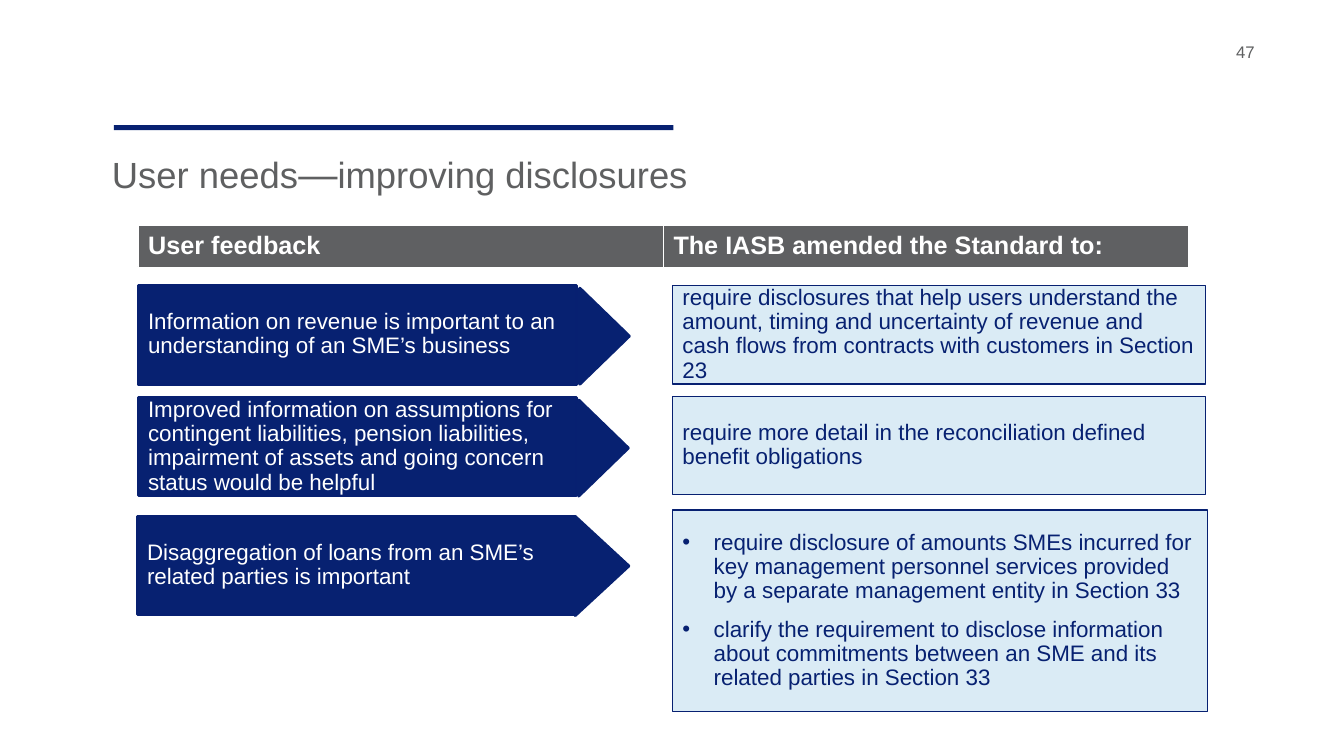
"""Build the slide on user needs and improved disclosures."""
from dataclasses import dataclass

from lxml import etree
from pptx import Presentation
from pptx.dml.color import RGBColor
from pptx.enum.shapes import MSO_SHAPE
from pptx.enum.text import MSO_ANCHOR, PP_ALIGN
from pptx.oxml.ns import qn
from pptx.shapes.autoshape import Shape
from pptx.slide import Slide
from pptx.table import _Cell
from pptx.text.text import TextFrame, _Paragraph
from pptx.util import Emu, Pt

RECTANGLE = MSO_SHAPE.RECTANGLE
TRIANGLE = MSO_SHAPE.ISOSCELES_TRIANGLE
LEFT = PP_ALIGN.LEFT
MIDDLE = MSO_ANCHOR.MIDDLE

EMU_PER_PX = 9144
FONT = "Arial"
NAVY, EDGE, PALE = "072171", "072071", "DAEBF5"
GREY, HEADER, WHITE = "5F6061", "5F6062", "FFFFFF"
BULLET_INDENT = 31


@dataclass(frozen=True)
class Box:
    """Position and size in px."""

    left: int
    top: int
    width: int
    height: int


@dataclass(frozen=True)
class Row:
    """A feedback arrow and the amendments that answer it."""

    feedback_box: Box
    tip_box: Box
    feedback: str
    amendment_box: Box
    amendments: tuple[str, ...]


ROWS = (
    Row(Box(137, 283, 435, 98), Box(552, 309, 95, 49),
        "Information on revenue is important to an understanding of an SME’s business",
        Box(667, 283, 529, 98),
        ("require disclosures that help users understand the amount, timing and uncertainty "
         "of revenue and cash flows from contracts with customers in Section 23",)),
    Row(Box(137, 394, 435, 98), Box(551, 420, 95, 49),
        "Improved information on assumptions for contingent liabilities, pension liabilities, "
        "impairment of assets and going concern status would be helpful",
        Box(667, 393, 529, 98),
        ("require more detail in the reconciliation defined benefit obligations",)),
    Row(Box(136, 512, 435, 98), Box(548, 535, 98, 53),
        "Disaggregation of loans from an SME’s related parties is important",
        Box(667, 506, 531, 200),
        ("require disclosure of amounts SMEs incurred for key management personnel services "
         "provided by a separate management entity in Section 33",
         "clarify the requirement to disclose information about commitments between an SME "
         "and its related parties in Section 33")),
)
TITLE = (("User needs", 26), ("—", 28), ("improving disclosures", 26))
HEADINGS = ("User feedback", "The IASB amended the Standard to:")


def px(length: int) -> Emu:
    """Turn px into EMU."""
    return Emu(length * EMU_PER_PX)


def rgb(colour: str) -> RGBColor:
    """Turn a hex string into a colour."""
    return RGBColor.from_string(colour)


def place(box: Box) -> tuple[Emu, Emu, Emu, Emu]:
    """Return the box in EMU."""
    return px(box.left), px(box.top), px(box.width), px(box.height)


def style(paragraph: _Paragraph, colour: str, size: int, bold: bool = False) -> None:
    """Set the paragraph's alignment and font."""
    paragraph.alignment = LEFT
    font = paragraph.font
    font.name, font.size, font.bold = FONT, Pt(size), bold
    font.color.rgb = rgb(colour)


def add_bullet(paragraph: _Paragraph) -> None:
    """Give the paragraph a hanging round bullet."""
    properties = paragraph._p.get_or_add_pPr()
    properties.set("marL", str(px(BULLET_INDENT)))
    properties.set("indent", str(-px(BULLET_INDENT)))
    etree.SubElement(properties, qn("a:buFont"), typeface=FONT)
    etree.SubElement(properties, qn("a:buChar"), char="•")


def add_block(slide: Slide, kind: MSO_SHAPE, box: Box, fill: str,
              line: str = "", weight: float = 0) -> Shape:
    """Add a filled shape, outlined if a line colour is given."""
    shape = slide.shapes.add_shape(kind, *place(box))
    shape.shadow.inherit = False
    shape.fill.solid()
    shape.fill.fore_color.rgb = rgb(fill)
    if line:
        shape.line.color.rgb = rgb(line)
        shape.line.width = Pt(weight)
    else:
        shape.line.fill.background()
    return shape


def write_block(shape: Shape, texts: tuple[str, ...], colour: str) -> None:
    """Write one paragraph per text, bulleted when there are several."""
    frame = shape.text_frame
    frame.word_wrap = True
    frame.vertical_anchor = MIDDLE
    for index, text in enumerate(texts):
        paragraph = frame.add_paragraph() if index else frame.paragraphs[0]
        paragraph.text = text
        if len(texts) > 1:
            add_bullet(paragraph)
        paragraph.line_spacing = 0.9
        if index:
            paragraph.space_before = Pt(10)
        style(paragraph, colour, 16)


def add_text(slide: Slide, box: Box) -> TextFrame:
    """Add a text box without insets."""
    frame = slide.shapes.add_textbox(*place(box)).text_frame
    frame.word_wrap = True
    frame.margin_left = frame.margin_right = frame.margin_top = frame.margin_bottom = 0
    return frame


def add_borders(cell: _Cell) -> None:
    """Draw white sides and top and a grey bottom on the cell."""
    properties = cell._tc.get_or_add_tcPr()
    sides = (("L", WHITE), ("R", WHITE), ("T", WHITE), ("B", GREY))
    for index, (side, colour) in enumerate(sides):
        line = etree.Element(qn(f"a:ln{side}"), w=str(Pt(1)))
        fill = etree.SubElement(line, qn("a:solidFill"))
        etree.SubElement(fill, qn("a:srgbClr"), val=colour)
        properties.insert(index, line)


def add_headings(slide: Slide, box: Box) -> None:
    """Add the one-row table of column headings."""
    table = slide.shapes.add_table(1, len(HEADINGS), *place(box)).table
    for cell, heading in zip(table.rows[0].cells, HEADINGS):
        cell.fill.solid()
        cell.fill.fore_color.rgb = rgb(HEADER)
        cell.vertical_anchor = MIDDLE
        add_borders(cell)
        paragraph = cell.text_frame.paragraphs[0]
        paragraph.text = heading
        style(paragraph, WHITE, 18, bold=True)


def add_row(slide: Slide, row: Row) -> None:
    """Add a feedback arrow and its amendment box."""
    feedback = add_block(slide, RECTANGLE, row.feedback_box, NAVY, EDGE, 2.25)
    write_block(feedback, (row.feedback,), WHITE)
    tip = add_block(slide, TRIANGLE, row.tip_box, NAVY, NAVY, 2.25)
    tip.rotation = 90
    amendment = add_block(slide, RECTANGLE, row.amendment_box, PALE, EDGE, 0.75)
    write_block(amendment, row.amendments, NAVY)


def main() -> None:
    """Build and save the presentation."""
    presentation = Presentation()
    presentation.slide_width, presentation.slide_height = px(1333), px(750)
    slide = presentation.slides.add_slide(presentation.slide_layouts[6])
    add_block(slide, RECTANGLE, Box(113, 124, 555, 5), NAVY)
    title = add_text(slide, Box(111, 148, 1082, 86)).paragraphs[0]
    for text, size in TITLE:
        run = title.add_run()
        run.text = text
        run.font.size = Pt(size)
    style(title, GREY, 26)
    number = add_text(slide, Box(1226, 41, 67, 29)).paragraphs[0]
    number.text = "47"
    style(number, GREY, 12)
    for row in ROWS:
        add_row(slide, row)
    add_headings(slide, Box(137, 224, 1042, 40))
    presentation.save("out.pptx")


if __name__ == "__main__":
    main()
